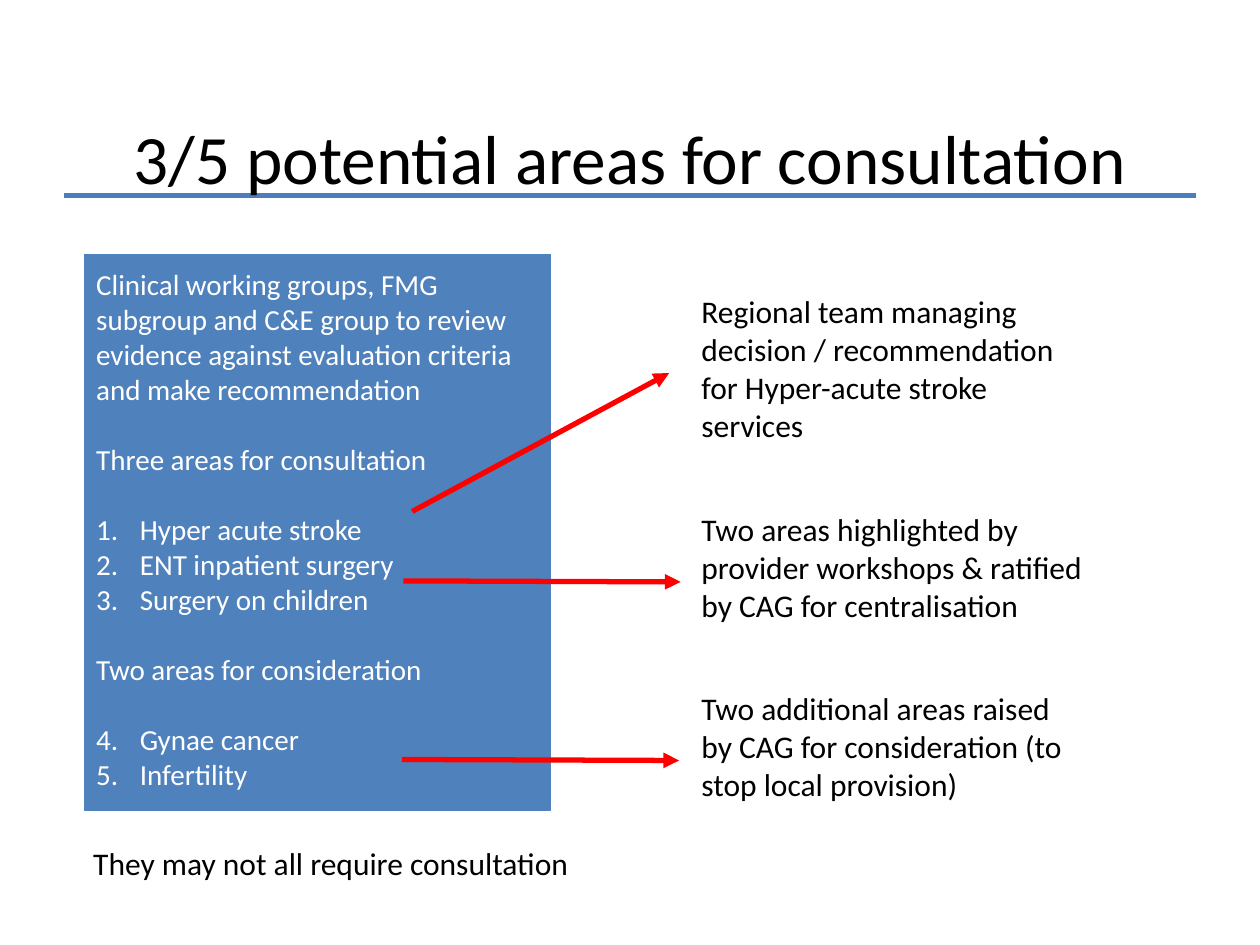
from dataclasses import dataclass

from lxml import etree
from pptx import Presentation
from pptx import util as u
from pptx.dml.color import RGBColor
from pptx.enum import shapes, text
from pptx.oxml.ns import qn


@dataclass(frozen=True)
class Theme:
    font: str = "Calibri"
    ink: str = "000000"
    paper: str = "FFFFFF"
    panel: str = "4F81BD"
    rule: str = "4B7EBC"
    arrow: str = "FF0000"
    title_size: float = 39.6
    panel_size: float = 16.6
    note_size: float = 18
    line_width: float = 3
    blank_line: float = 20.2


@dataclass(frozen=True)
class Box:
    """Position and size in centimetres."""
    left: float
    top: float
    width: float
    height: float


@dataclass(frozen=True)
class Line:
    """End points in centimetres."""
    x1: float
    y1: float
    x2: float
    y2: float


@dataclass(frozen=True)
class Note:
    words: str
    box: Box
    wrap: bool = True


@dataclass(frozen=True)
class Entry:
    """A panel paragraph; number is the start of its list, 0 for plain text."""
    words: str
    number: int = 0
    gap: bool = False


THEME = Theme()
TITLE = "3/5 potential areas for consultation"
TITLE_BOX = Box(1.27, 2.34, 22.86, 1.63)
RULE = Line(1.3, 3.94, 24.1, 3.94)
PANEL_BOX = Box(1.7, 5.13, 9.4, 11.2)
ENTRIES = [
    Entry("Clinical working groups, FMG subgroup and C&E group to review "
          "evidence against evaluation criteria and make recommendation"),
    Entry("Three areas for consultation", gap=True),
    Entry("Hyper acute stroke", 1, gap=True),
    Entry("ENT inpatient surgery", 1),
    Entry("Surgery on children", 1),
    Entry("Two areas for consideration", gap=True),
    Entry("Gynae cancer", 4, gap=True),
    Entry("Infertility", 4),
]
NOTES = [
    Note("Regional team managing decision / recommendation for Hyper-acute "
         "stroke services", Box(13.89, 5.77, 8.2, 3.33)),
    Note("Two areas highlighted by provider workshops & ratified by CAG for "
         "centralisation", Box(13.89, 10.16, 8.2, 2.57)),
    Note("Two additional areas raised by CAG for consideration (to stop local "
         "provision)", Box(13.89, 13.77, 8.2, 2.57)),
    Note("They may not all require consultation",
         Box(1.63, 16.89, 10.52, 1.02), wrap=False),
]
ARROWS = [
    Line(8.31, 10.31, 13.49, 7.52),
    Line(8.13, 11.71, 13.72, 11.73),
    Line(8.1, 15.31, 13.69, 15.33),
]


def place(shape, box: Box) -> None:
    shape.left, shape.top = u.Cm(box.left), u.Cm(box.top)
    shape.width, shape.height = u.Cm(box.width), u.Cm(box.height)


def style(para, size: float, color: str) -> None:
    for span in para.runs:
        span.font.name = THEME.font
        span.font.size = u.Pt(size)
        span.font.color.rgb = RGBColor.from_string(color)


def set_bullet(para, number: int) -> None:
    properties = para._p.get_or_add_pPr()
    indent = u.Cm(0.88) if number else 0
    properties.set("marL", str(indent))
    properties.set("indent", str(-indent))
    if number:
        bullet = etree.SubElement(properties, qn("a:buAutoNum"))
        bullet.set("type", "arabicPeriod")
        bullet.set("startAt", str(number))
    else:
        etree.SubElement(properties, qn("a:buNone"))


def add_line(page, line: Line, color: str, arrow: bool = False):
    connector = page.shapes.add_connector(
        shapes.MSO_CONNECTOR.STRAIGHT,
        u.Cm(line.x1), u.Cm(line.y1), u.Cm(line.x2), u.Cm(line.y2))
    connector.line.color.rgb = RGBColor.from_string(color)
    connector.line.width = u.Pt(THEME.line_width)
    if arrow:
        outline = connector.line._get_or_add_ln()
        etree.SubElement(outline, qn("a:tailEnd")).set("type", "triangle")
    etree.SubElement(connector.element.spPr, qn("a:effectLst"))
    return connector


def fill_title(title) -> None:
    place(title, TITLE_BOX)
    frame = title.text_frame
    frame.text = TITLE
    frame.auto_size = text.MSO_AUTO_SIZE.NONE
    frame.vertical_anchor = text.MSO_ANCHOR.MIDDLE
    frame.paragraphs[0].alignment = text.PP_ALIGN.CENTER
    style(frame.paragraphs[0], THEME.title_size, THEME.ink)


def fill_panel(panel, entries: list[Entry]) -> None:
    place(panel, PANEL_BOX)
    panel.fill.solid()
    panel.fill.fore_color.rgb = RGBColor.from_string(THEME.panel)
    panel.line.color.rgb = RGBColor.from_string(THEME.panel)
    panel.line.width = u.Pt(0.75)
    frame = panel.text_frame
    frame.text = "\n".join(entry.words for entry in entries)
    frame.auto_size = text.MSO_AUTO_SIZE.NONE
    frame.vertical_anchor = text.MSO_ANCHOR.TOP
    frame.margin_left = frame.margin_right = u.Cm(0.24)
    frame.margin_top = frame.margin_bottom = u.Cm(0.24)
    for para, entry in zip(frame.paragraphs, entries):
        set_bullet(para, entry.number)
        para.space_before = u.Pt(THEME.blank_line if entry.gap else 0)
        style(para, THEME.panel_size, THEME.paper)


def add_note(page, note: Note) -> None:
    box = page.shapes.add_textbox(0, 0, 0, 0)
    place(box, note.box)
    frame = box.text_frame
    frame.word_wrap = note.wrap
    frame.text = note.words
    style(frame.paragraphs[0], THEME.note_size, THEME.ink)


def main() -> None:
    deck = Presentation()
    deck.slide_width, deck.slide_height = u.Cm(25.4), u.Cm(19.05)
    page = deck.slides.add_slide(deck.slide_layouts[1])

    # Heading, with its rule behind the text
    title = page.shapes.title
    fill_title(title)
    title.element.addprevious(add_line(page, RULE, THEME.rule).element)

    # Panel of areas
    fill_panel(page.placeholders[1], ENTRIES)

    # Explanations and the arrows leading to them
    for note in NOTES:
        add_note(page, note)
    for arrow in ARROWS:
        add_line(page, arrow, THEME.arrow, arrow=True)

    deck.save("out.pptx")


if __name__ == "__main__":
    main()
